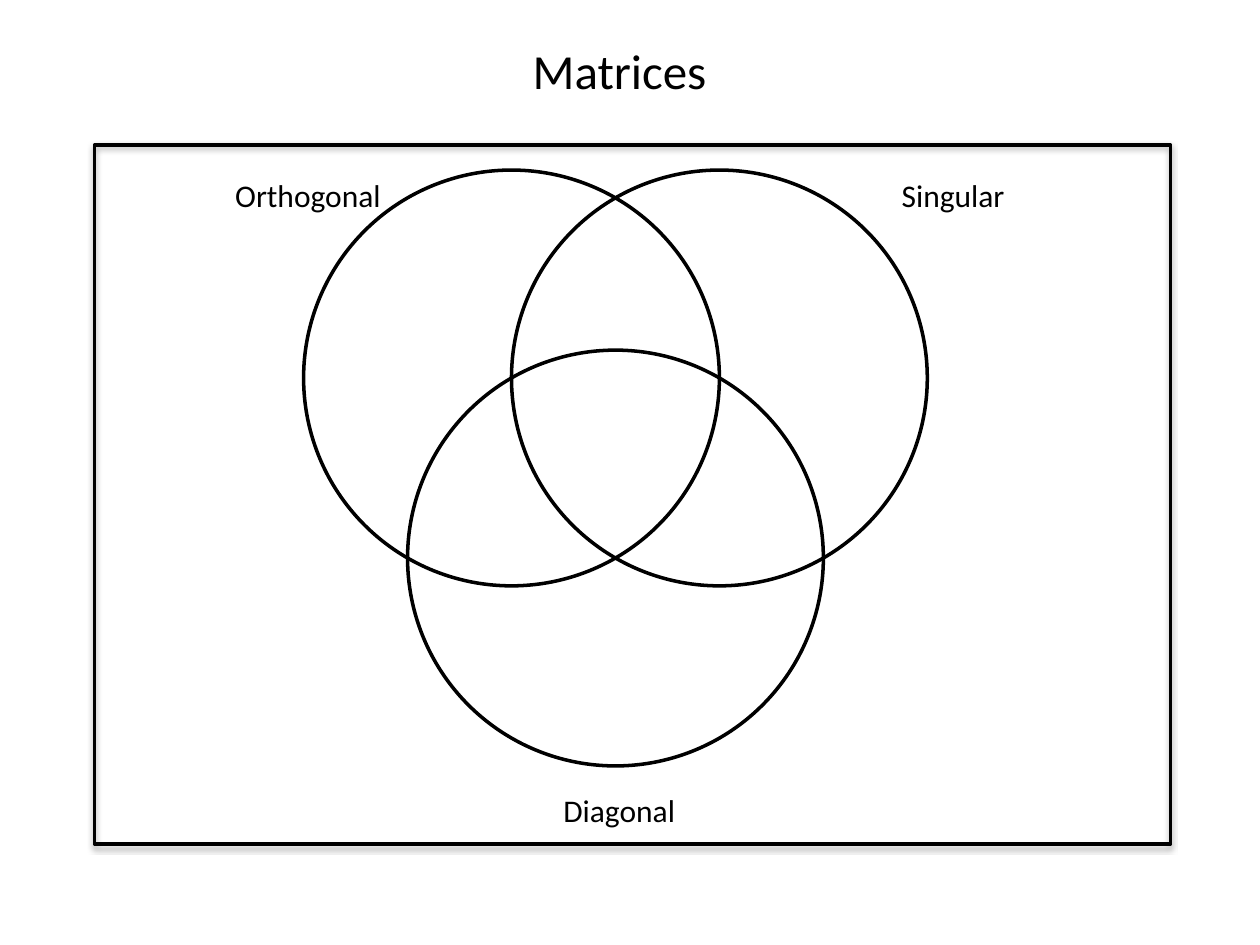
from dataclasses import dataclass
from math import sqrt

from lxml.etree import SubElement
from pptx import Presentation
from pptx.dml.color import RGBColor
from pptx.enum.shapes import MSO_SHAPE
from pptx.enum.text import MSO_AUTO_SIZE, PP_ALIGN
from pptx.oxml.ns import qn
from pptx.util import Inches, Pt

INK = "000000"
SIZE = 3.3
STEP = SIZE / 2
LEFT, TOP = 2.41, 1.35


@dataclass
class Label:
    text: str
    left: float
    top: float
    width: float = 1.57
    height: float = 0.4
    size: int = 18
    align: PP_ALIGN = PP_ALIGN.CENTER
    wrap: bool = True


LABELS = [
    Label("Orthogonal", 1.66, 1.35),
    Label("Singular", 6.78, 1.35),
    Label("Diagonal", 4.13, 6.23),
    Label("Matrices", 4.13, 0.27, 1.6, 0.57, 28, PP_ALIGN.LEFT, False),
]
# The three centres form an equilateral triangle with sides of one radius.
RINGS = [
    (LEFT, TOP),
    (LEFT + STEP, TOP),
    (LEFT + STEP / 2, TOP + STEP * sqrt(3) / 2),
]


def paint(color, code: str) -> None:
    color.rgb = RGBColor.from_string(code)


def apply(target, form: dict) -> None:
    """Set each named attribute on the target."""
    for name, value in form.items():
        setattr(target, name, value)


def outline(shapes, kind: MSO_SHAPE, *box: float):
    """Draw an unfilled shape; box is left, top, width, height in inches."""
    shape = shapes.add_shape(kind, *map(Inches, box))
    shape.shadow.inherit = False
    shape.fill.background()
    shape.line.width = Pt(2)
    paint(shape.line.color, INK)
    return shape


def shade(shape) -> None:
    """Add a soft shadow just below the shape."""
    effects = shape._element.spPr.find(qn("a:effectLst"))
    outer = SubElement(effects, qn("a:outerShdw"), blurRad=str(Pt(3.1)),
                       dist=str(Pt(1.8)), dir="5400000", rotWithShape="0")
    color = SubElement(outer, qn("a:srgbClr"), val=INK)
    SubElement(color, qn("a:alpha"), val="35000")


def write(shapes, label: Label) -> None:
    box = shapes.add_textbox(*map(Inches, (label.left, label.top,
                                           label.width, label.height)))
    frame = box.text_frame
    apply(frame, {"word_wrap": label.wrap,
                  "auto_size": MSO_AUTO_SIZE.SHAPE_TO_FIT_TEXT})
    line = frame.paragraphs[0]
    line.alignment = label.align
    run = line.add_run()
    run.text = label.text
    apply(run.font, {"name": "Calibri", "size": Pt(label.size)})
    paint(run.font.color, INK)


def main() -> None:
    deck = Presentation()
    apply(deck, {"slide_width": Inches(10), "slide_height": Inches(7.5)})
    shapes = deck.slides.add_slide(deck.slide_layouts[6]).shapes
    group = shapes.add_group_shape()
    for left, top in RINGS:
        outline(group.shapes, MSO_SHAPE.OVAL, left, top, SIZE, SIZE)
    for label in LABELS:
        write(shapes, label)
    shade(outline(shapes, MSO_SHAPE.RECTANGLE, 0.75, 1.15, 8.54, 5.55))
    deck.save("out.pptx")


if __name__ == "__main__":
    main()
